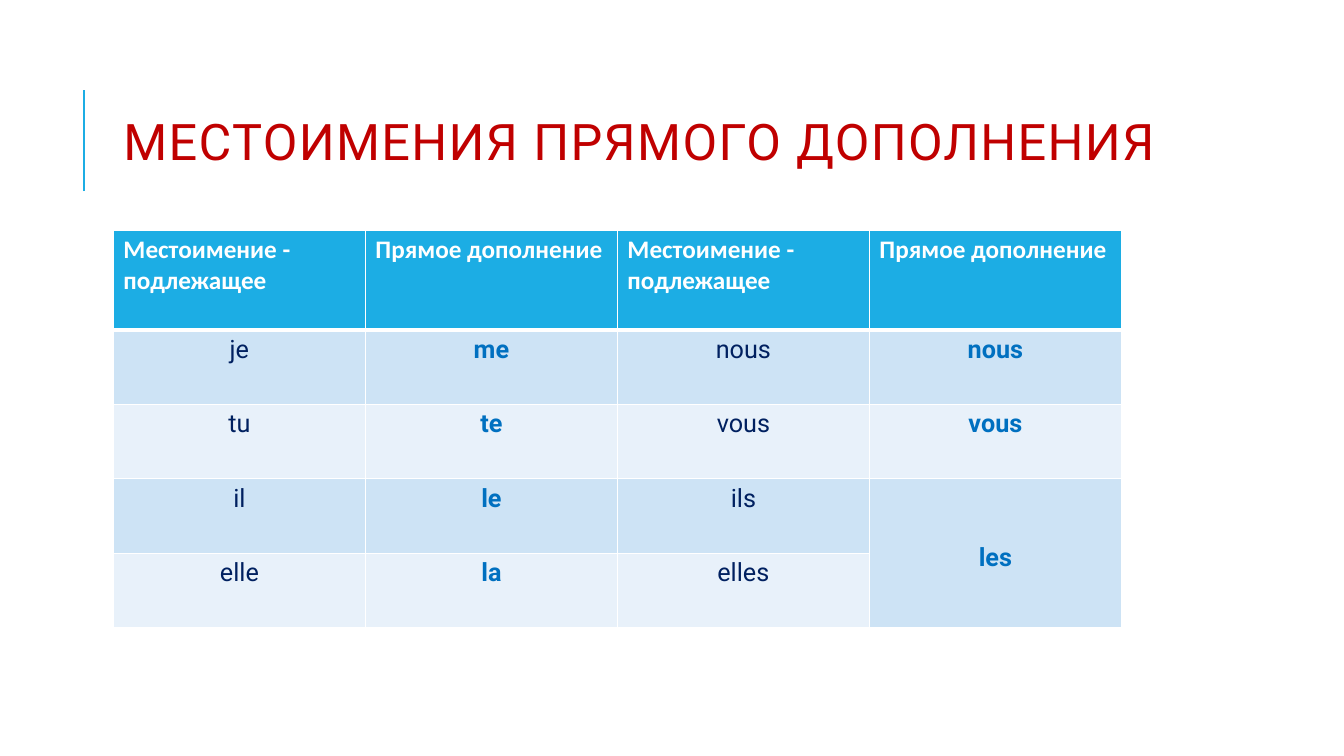
from pptx import Presentation
from pptx.dml.color import RGBColor
from pptx.enum.shapes import MSO_CONNECTOR
from pptx.enum.text import MSO_ANCHOR, PP_ALIGN
from pptx.oxml.ns import qn
from pptx.util import Pt
from lxml.etree import SubElement

PX = 9525
HEAD = ["Местоимение - подлежащее", "Прямое дополнение"] * 2
ROWS = [
    ["je", "me", "nous", "nous"],
    ["tu", "te", "vous", "vous"],
    ["il", "le", "ils", "les"],
    ["elle", "la", "elles", ""],
]
BANDS = ["CDE3F5", "E8F1FA"]
TOP = {"name": "Calibri", "size": Pt(18), "bold": True}
SUBJECT = {"name": "Roboto", "size": Pt(18), "bold": False}
OBJECT = {**SUBJECT, "bold": True}
TITLE = {"name": "Roboto", "size": Pt(36), "bold": False}


def px(*nums):
    """Turn pixel lengths into EMU."""
    return [num * PX for num in nums]


def paint(color, code):
    """Give a colour format a hex colour."""
    color.rgb = RGBColor.from_string(code)


def write(frame, text, style, code, align=PP_ALIGN.LEFT):
    """Put one styled run into a text frame and return the run."""
    para = frame.paragraphs[0]
    para.alignment = align
    run = para.add_run()
    run.text = text
    for key, value in style.items():
        setattr(run.font, key, value)
    paint(run.font.color, code)
    return run


def add_title(slide, text):
    """Add the slide title."""
    box = slide.shapes.add_textbox(*px(108, 61, 1020, 157))
    frame = box.text_frame
    frame.word_wrap = True
    frame.vertical_anchor = MSO_ANCHOR.MIDDLE
    run = write(frame, text, TITLE, "C00000")
    run.font._element.set("spc", "100")
    frame.paragraphs[0].line_spacing = 0.8


def add_rule(slide):
    """Add the upright line beside the title."""
    rule = slide.shapes.add_connector(
        MSO_CONNECTOR.STRAIGHT, *px(80, 182, 80, 86))
    rule.line.width = Pt(1.5)
    paint(rule.line.color, "1CADE4")
    SubElement(rule._element.spPr, qn("a:effectLst"))


def edge(cell, base):
    """Draw white cell borders, with the given width at the bottom."""
    props = cell._tc.get_or_add_tcPr()
    for side, width in zip("LRTB", (1, 1, 1, base)):
        line = SubElement(props, qn(f"a:ln{side}"), w=str(Pt(width)))
        fill = SubElement(line, qn("a:solidFill"))
        SubElement(fill, qn("a:srgbClr"), val="FFFFFF")


def fill_cell(cell, text, style, code, back, align, base=1):
    """Set the borders, fill and text of a cell."""
    edge(cell, base)
    cell.fill.solid()
    paint(cell.fill.fore_color, back)
    if text:
        write(cell.text_frame, text, style, code, align)


def add_grid(slide):
    """Add the pronoun table."""
    grid = slide.shapes.add_table(5, 4, *px(108, 219, 960, 379)).table
    for col in grid.columns:
        col.width = 240 * PX
    for num, row in enumerate(grid.rows):
        row.height = (71 if num else 95) * PX
    for col, text in enumerate(HEAD):
        fill_cell(grid.cell(0, col), text, TOP, "FFFFFF", "1CADE4",
                  PP_ALIGN.LEFT, 3)
    for num, words in enumerate(ROWS):
        for col, text in enumerate(words):
            style, code = ((OBJECT, "0070C0") if col % 2
                           else (SUBJECT, "002060"))
            fill_cell(grid.cell(num + 1, col), text, style, code,
                      BANDS[num % 2], PP_ALIGN.CENTER)
    les = grid.cell(3, 3)
    les.merge(grid.cell(4, 3))
    les.vertical_anchor = MSO_ANCHOR.MIDDLE
    les.margin_top = 13 * PX


def main():
    """Build and save the slide."""
    deck = Presentation()
    deck.slide_width, deck.slide_height = px(1280, 720)
    slide = deck.slides.add_slide(deck.slide_layouts[6])
    add_rule(slide)
    add_title(slide, "МЕСТОИМЕНИЯ ПРЯМОГО ДОПОЛНЕНИЯ")
    add_grid(slide)
    deck.save("out.pptx")


if __name__ == "__main__":
    main()
